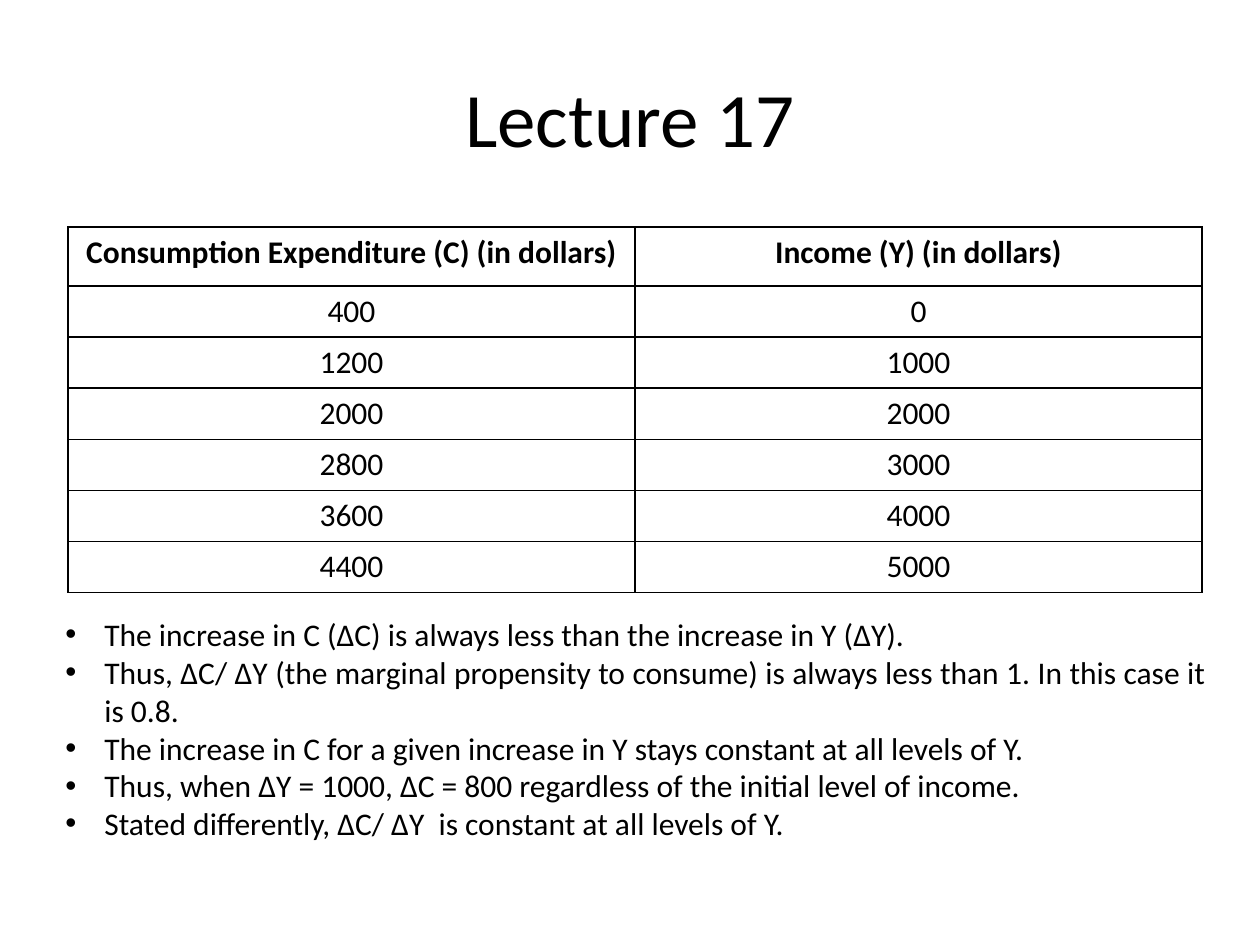
"""Build the Lecture 17 slide on consumption expenditure and income."""
from lxml import etree
from pptx import Presentation
from pptx.dml.color import RGBColor
from pptx.enum.text import MSO_ANCHOR, PP_ALIGN
from pptx.oxml.ns import qn
from pptx.util import Pt

CENTER, JUSTIFY = PP_ALIGN.CENTER, PP_ALIGN.JUSTIFY
TOP, MIDDLE = MSO_ANCHOR.TOP, MSO_ANCHOR.MIDDLE
SCALE = 914400 / 126
COLORS = {"text": "000000", "border": "000000", "cell": "FFFFFF"}
HEADERS = ["Consumption Expenditure (C) (in dollars)", "Income (Y) (in dollars)"]
INCOMES = range(0, 5001, 1000)
ROWS = [HEADERS] + [[str(400 + income * 4 // 5), str(income)] for income in INCOMES]
POINTS = [
    "The increase in C (∆C) is always less than the increase in Y (∆Y).",
    "Thus, ∆C/ ∆Y (the marginal propensity to consume) is always less than 1. In this case it is 0.8. ",
    "The increase in C for a given increase in Y stays constant at all levels of Y.",
    "Thus, when ∆Y = 1000, ∆C = 800 regardless of the initial level of income.",
    "Stated differently, ∆C/ ∆Y  is constant at all levels of Y.",
]


def px(*lengths):
    return [round(length * SCALE) for length in lengths]


def style(para, size, align, bold=False):
    para.alignment = align
    para.font.name = "Calibri"
    para.font.size = Pt(size)
    para.font.bold = bold
    para.font.color.rgb = RGBColor.from_string(COLORS["text"])


deck = Presentation()
deck.slide_width, deck.slide_height = px(1260, 945)
page = deck.slides.add_slide(deck.slide_layouts[5])

title = page.shapes.title
title.left, title.top, title.width, title.height = px(63, 38, 1134, 158)
title.text_frame.text = "Lecture 17"
title.text_frame.vertical_anchor = MIDDLE
style(title.text_frame.paragraphs[0], 44, CENTER)

table = page.shapes.add_table(len(ROWS), 2, *px(68, 227, 1134, 365)).table
table.horz_banding = False
for column in table.columns:
    column.width = px(567)[0]
for row_index, values in enumerate(ROWS):
    table.rows[row_index].height = px(51 if row_index else 59)[0]
    for column_index, value in enumerate(values):
        cell = table.cell(row_index, column_index)
        cell.text = value
        cell.vertical_anchor = TOP
        style(cell.text_frame.paragraphs[0], 18, CENTER, bold=row_index == 0)
        cell.fill.solid()
        cell.fill.fore_color.rgb = RGBColor.from_string(COLORS["cell"])
        properties = cell._tc.get_or_add_tcPr()
        for position, side in enumerate(["a:lnL", "a:lnR", "a:lnT", "a:lnB"]):
            line = etree.Element(qn(side), w=str(Pt(1)))
            fill = etree.SubElement(line, qn("a:solidFill"))
            etree.SubElement(fill, qn("a:srgbClr"), val=COLORS["border"])
            properties.insert(position, line)

box = page.shapes.add_textbox(*px(53, 609, 1166, 242))
frame = box.text_frame
frame.word_wrap = True
indent = px(39)[0]
for index, point in enumerate(POINTS):
    para = frame.add_paragraph() if index else frame.paragraphs[0]
    para.text = point
    properties = para._p.get_or_add_pPr()
    properties.set("marL", str(indent))
    properties.set("indent", str(-indent))
    etree.SubElement(properties, qn("a:buFont"), typeface="Arial")
    etree.SubElement(properties, qn("a:buChar"), char="•")
    style(para, 18, JUSTIFY)

deck.save("out.pptx")
